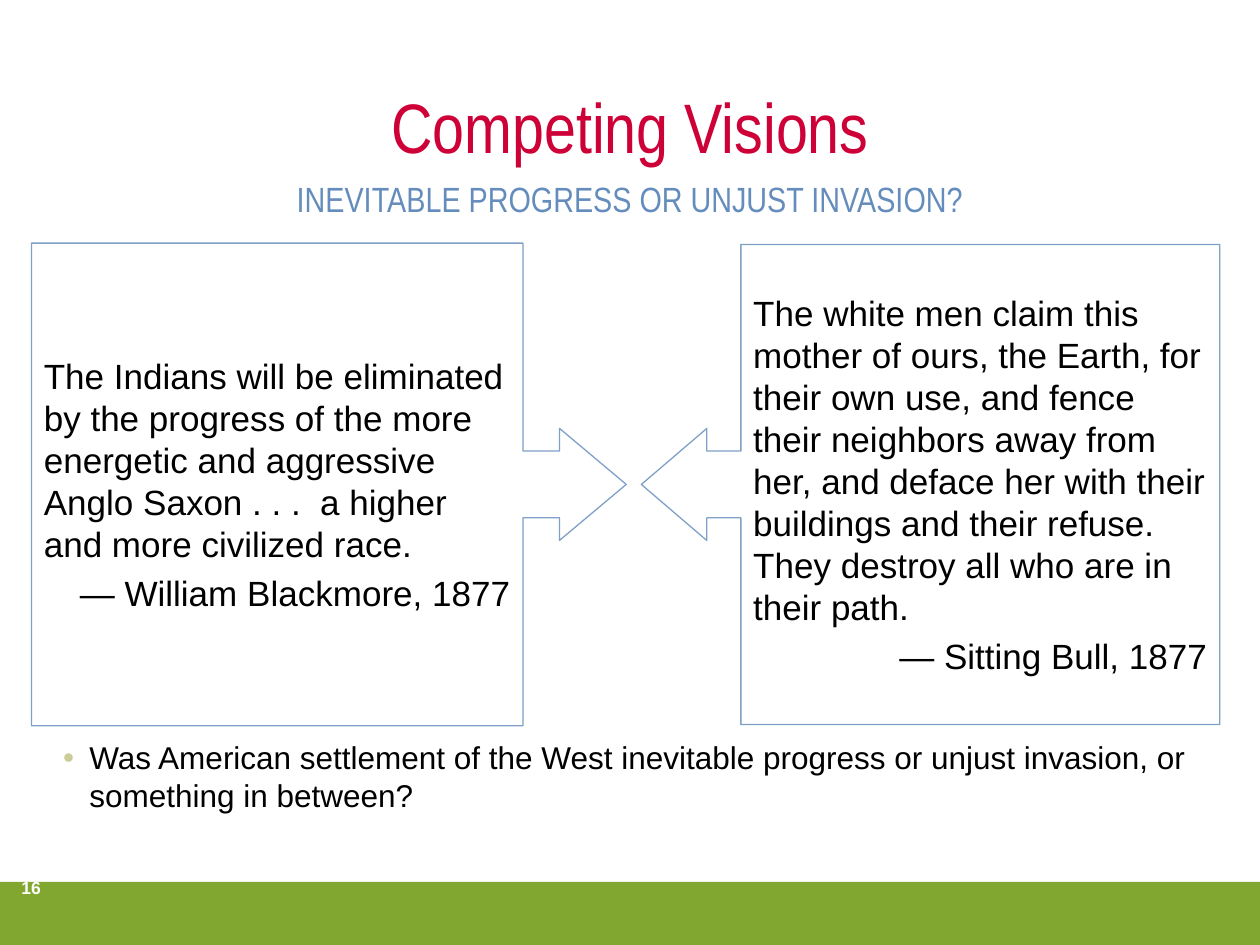
"""Build the Competing Visions slide with two opposing quotations."""
from lxml import etree
from pptx import Presentation
from pptx.dml.color import RGBColor
from pptx.enum import shapes, text
from pptx.oxml import ns
from pptx.util import Inches, Pt

LEFT, CENTER, RIGHT = text.PP_ALIGN.LEFT, text.PP_ALIGN.CENTER, text.PP_ALIGN.RIGHT
TOP, MIDDLE = text.MSO_ANCHOR.TOP, text.MSO_ANCHOR.MIDDLE


def color(value):
    return RGBColor.from_string(value)


class SlideBuilder:
    green, red, blue, outline = "81A730", "CD0038", "648CBC", "7FA0C7"
    black, white, bullet_color = "000000", "FFFFFF", "CCCC99"
    body_font, heading_font = "Arial", "Arial Narrow"

    def __init__(self, slide):
        self.slide = slide

    def set_text(self, shape, box, lines, size, font=None, fill=None, bold=False,
                 inset=0, anchor=TOP, **paragraph_format):
        for name, value in zip(("left", "top", "width", "height"), box):
            setattr(shape, name, Inches(value))
        frame = shape.text_frame
        frame_format = {"word_wrap": True, "auto_size": text.MSO_AUTO_SIZE.NONE,
                        "vertical_anchor": anchor}
        for side in ("left", "top", "right", "bottom"):
            frame_format[f"margin_{side}"] = Inches(inset)
        for name, value in frame_format.items():
            setattr(frame, name, value)
        for index, (line, alignment) in enumerate(lines):
            paragraph = frame.add_paragraph() if index else frame.paragraphs[0]
            for name, value in {"alignment": alignment, **paragraph_format}.items():
                setattr(paragraph, name, value)
            run = paragraph.add_run()
            run.text = line
            for name, value in {"name": font or self.body_font, "size": Pt(size),
                                "bold": bold}.items():
                setattr(run.font, name, value)
            run.font.color.rgb = color(fill or self.black)

    def text_box(self, box, lines, size, **style):
        shape = self.slide.shapes.add_textbox(*map(Inches, box))
        self.set_text(shape, box, lines, size, **style)

    def band(self, box):
        shape = self.slide.shapes.add_shape(
            shapes.MSO_SHAPE.RECTANGLE, *map(Inches, box))
        shape.shadow.inherit = False
        shape.fill.solid()
        shape.fill.fore_color.rgb = color(self.green)
        shape.line.fill.background()

    def title(self, box, line):
        self.set_text(self.slide.shapes.title, box, [(line, CENTER)], 40,
                      font=self.heading_font, fill=self.red, anchor=MIDDLE,
                      line_spacing=0.8)

    def bullet(self, box, line):
        shape = self.slide.placeholders[1]
        self.set_text(shape, box, [(line, LEFT)], 18, space_before=Pt(4))
        properties = shape.text_frame.paragraphs[0]._p.get_or_add_pPr()
        indent = Inches(0.21)
        properties.set("marL", str(indent))
        properties.set("indent", str(-indent))
        bullet = etree.SubElement(properties, ns.qn("a:buClr"))
        etree.SubElement(bullet, ns.qn("a:srgbClr"), val=self.bullet_color)
        etree.SubElement(properties, ns.qn("a:buChar"), char="•")

    def arrow_callout(self, outer, inner, neck, tip, top, bottom):
        middle, shaft, head = (top + bottom) / 2, 0.265, 0.445
        points = [(outer, top), (outer, bottom), (inner, bottom),
                  (inner, middle + shaft), (neck, middle + shaft),
                  (neck, middle + head), (tip, middle), (neck, middle - head),
                  (neck, middle - shaft), (inner, middle - shaft), (inner, top)]
        start, *rest = [(Inches(x), Inches(y)) for x, y in points]
        builder = self.slide.shapes.build_freeform(*start)
        builder.add_line_segments(rest, close=True)
        shape = builder.convert_to_shape()
        shape.shadow.inherit = False
        shape.fill.background()
        shape.line.color.rgb = color(self.outline)
        shape.line.width = Pt(0.75)

    def quotation(self, box, quote, author):
        self.text_box(box, [(quote, LEFT), (author, RIGHT)], 20, inset=0.1,
                      anchor=MIDDLE, space_before=Pt(4))


def main():
    presentation = Presentation()
    presentation.slide_width, presentation.slide_height = Inches(10), Inches(7.5)
    builder = SlideBuilder(presentation.slides.add_slide(presentation.slide_layouts[1]))
    builder.band((0, 7, 10, 0.5))
    builder.text_box((0.17, 6.92, 6.41, 0.25), [("16", LEFT)], 10,
                     fill=builder.white, bold=True, anchor=MIDDLE)
    builder.title((0.5, 0.48, 9, 1.15), "Competing Visions")
    builder.bullet((0.5, 5.86, 9, 0.84),
                   "Was American settlement of the West inevitable progress or "
                   "unjust invasion, or something in between?")
    builder.text_box((0.5, 1.36, 9, 0.42),
                     [("INEVITABLE PROGRESS OR UNJUST INVASION?", CENTER)], 20,
                     font=builder.heading_font, fill=builder.blue, inset=0.05,
                     space_before=Pt(4))
    builder.arrow_callout(0.25, 4.15, 4.44, 4.97, 1.93, 5.76)
    builder.quotation((0.25, 2.76, 3.9, 2.17),
                      "The Indians will be eliminated by the progress of the more "
                      "energetic and aggressive Anglo Saxon . . .  a higher and more "
                      "civilized race.", "— William Blackmore, 1877")
    builder.arrow_callout(9.68, 5.88, 5.61, 5.09, 1.94, 5.75)
    builder.quotation((5.88, 2.28, 3.8, 3.13),
                      "The white men claim this mother of ours, the Earth, for their "
                      "own use, and fence their neighbors away from her, and deface "
                      "her with their buildings and their refuse. They destroy all "
                      "who are in their path.", "— Sitting Bull, 1877")
    presentation.save("out.pptx")


if __name__ == "__main__":
    main()
